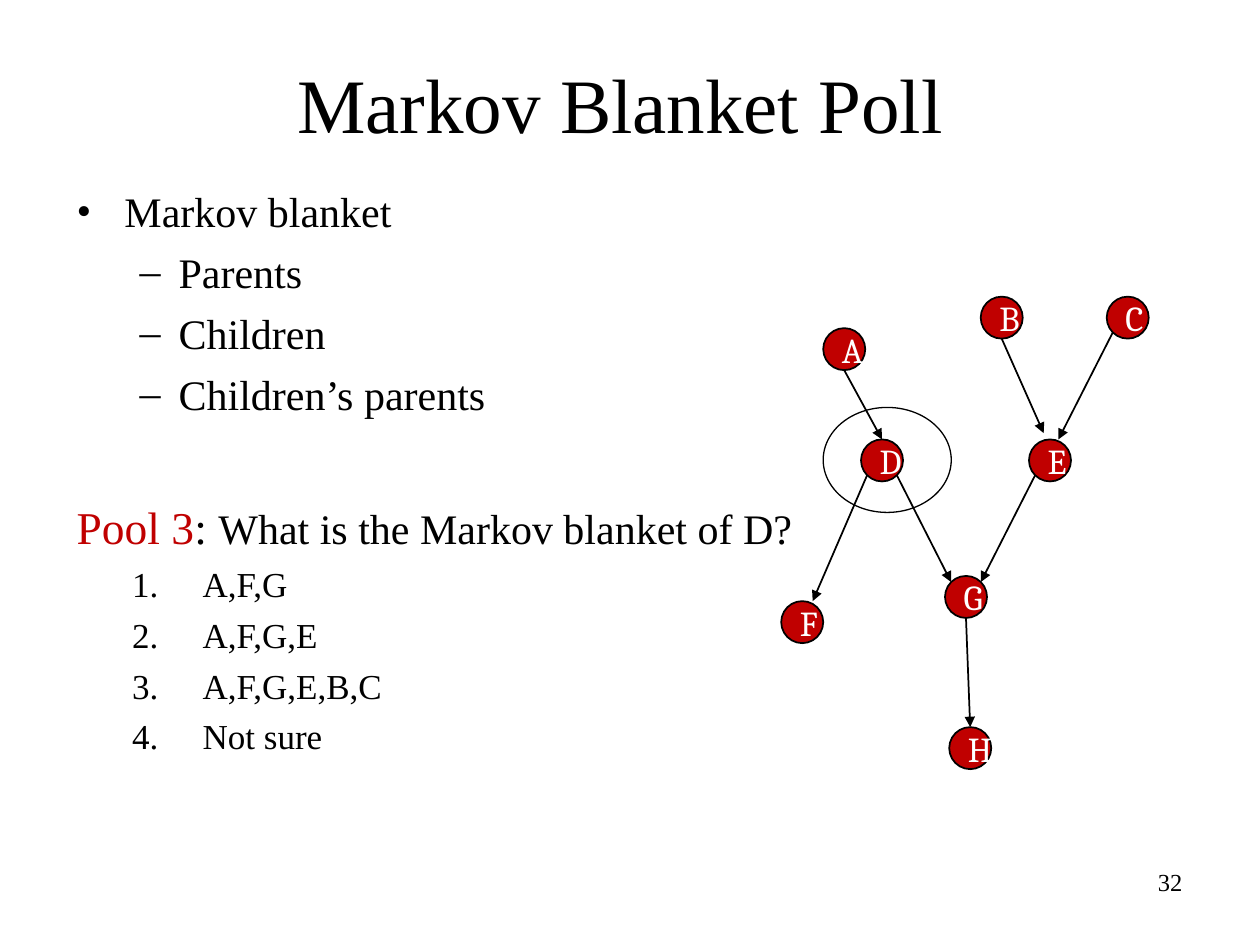
from lxml import etree
from pptx import Presentation
from pptx import util as u
from pptx.dml.color import RGBColor
from pptx.enum import shapes, text
from pptx.oxml.ns import qn

COLORS = {"ink": "000000", "accent": "C00000", "letter": "FFFFFF"}
SERIF, NODE_FONT = "Times New Roman", "Cambria"
WIDTH, HEIGHT = u.Inches(10), u.Inches(7.5)
COLUMNS, ROWS = 120, 90
RADIUS = 2
DIAGONAL = 0.71

NODES = {
    "D": (84, 43.85), "E": (100, 43.85), "G": (92, 56.85), "F": (76.4, 59.25),
    "H": (92.4, 71.25), "C": (107.4, 30.25), "B": (95.4, 30.25), "A": (80.4, 33.25),
}
TOP, BOTTOM = (0, -1), (0, 1)
LOWER_LEFT, LOWER_RIGHT = (-DIAGONAL, DIAGONAL), (DIAGONAL, DIAGONAL)
UPPER_LEFT, UPPER_RIGHT = (-DIAGONAL, -DIAGONAL), (DIAGONAL, -DIAGONAL)
EDGES = [
    ("D", LOWER_RIGHT, "G", UPPER_LEFT), ("E", LOWER_LEFT, "G", UPPER_RIGHT),
    ("D", LOWER_LEFT, "F", (0.5, -1)), ("G", BOTTOM, "H", TOP),
    ("C", LOWER_LEFT, "E", (0.4, -1)), ("B", BOTTOM, "E", (-0.3, -1.3)),
    ("A", BOTTOM, "D", TOP),
]
BLANKET = ["Parents", "Children", "Children’s parents"]
ANSWERS = ["A,F,G", "A,F,G,E", "A,F,G,E,B,C", "Not sure"]


def rgb(name):
    """Return the palette colour of that name."""
    return RGBColor.from_string(COLORS[name])


def grid(column, row):
    """Turn a grid position into slide lengths."""
    return round(WIDTH * column / COLUMNS), round(HEIGHT * row / ROWS)


def style(font, size, color="ink", face=SERIF):
    """Set size, colour and face of a font."""
    font.size, font.name = u.Pt(size), face
    font.color.rgb = rgb(color)


def add_title(slide, wording):
    """Place and format the title placeholder."""
    title = slide.shapes.title
    title.left, title.top = grid(6, 3.6)
    title.width, title.height = grid(108, 12.4)
    title.text_frame.text = wording
    title.text_frame.vertical_anchor = text.MSO_ANCHOR.MIDDLE
    heading = title.text_frame.paragraphs[0]
    heading.alignment = text.PP_ALIGN.CENTER
    style(heading.runs[0].font, 44)


def add_text_area(slide, position, size):
    """Add a wrapping text box and return its frame."""
    frame = slide.shapes.add_textbox(*grid(*position), *grid(*size)).text_frame
    frame.word_wrap = True
    return frame


def add_item(frame, wording, size, margin, hanging, mark, level=1):
    """Append a bulleted or, without a mark, numbered paragraph."""
    item = frame.add_paragraph() if frame.text else frame.paragraphs[0]
    if frame.text:
        item.space_before = u.Pt(size / 4)
    item.text, item.level = wording, level
    properties = item._p.get_or_add_pPr()
    properties.set("marL", str(u.Inches(margin)))
    properties.set("indent", str(-u.Inches(hanging)))
    etree.SubElement(properties, qn("a:buFont"), typeface=SERIF)
    if mark:
        etree.SubElement(properties, qn("a:buChar"), char=mark)
    else:
        etree.SubElement(properties, qn("a:buAutoNum"), type="arabicPeriod")
    style(item.font, size)
    style(item.runs[0].font, size)


def add_question(frame, parts):
    """Append the poll question, set apart from the list above."""
    question = frame.add_paragraph()
    question.space_before = u.Pt(46)
    for wording, size, color in parts:
        run = question.add_run()
        run.text = wording
        style(run.font, size, color)


def add_ellipse(slide, center, radii, line_width):
    """Add an unfilled ellipse around a grid position."""
    (x, y), (rx, ry) = center, radii
    ellipse = slide.shapes.add_shape(
        shapes.MSO_SHAPE.OVAL, *grid(x - rx, y - ry), *grid(2 * rx, 2 * ry))
    ellipse.shadow.inherit = False
    ellipse.fill.background()
    ellipse.line.color.rgb, ellipse.line.width = rgb("ink"), u.Pt(line_width)
    return ellipse


def add_node(slide, letter):
    """Add one lettered node of the network."""
    node = add_ellipse(slide, NODES[letter], (RADIUS, RADIUS), 1)
    node.fill.solid()
    node.fill.fore_color.rgb = rgb("accent")
    node.text_frame.text = letter
    node.text_frame.vertical_anchor = text.MSO_ANCHOR.MIDDLE
    label = node.text_frame.paragraphs[0]
    label.alignment = text.PP_ALIGN.CENTER
    style(label.runs[0].font, 20, "letter", NODE_FONT)


def anchor(letter, offset):
    """Return the point that lies an offset in radii from a node's centre."""
    return grid(*(c + RADIUS * d for c, d in zip(NODES[letter], offset)))


def add_edge(slide, parent, leaving, child, arriving):
    """Draw an arrow from a parent node to its child."""
    edge = slide.shapes.add_connector(
        shapes.MSO_CONNECTOR.STRAIGHT, *anchor(parent, leaving), *anchor(child, arriving))
    edge.line.color.rgb, edge.line.width = rgb("ink"), u.Pt(1)
    etree.SubElement(edge.line._get_or_add_ln(), qn("a:tailEnd"), type="triangle")
    etree.SubElement(edge._element.spPr, qn("a:effectLst"))


def main():
    """Build and save the slide."""
    deck = Presentation()
    deck.slide_width, deck.slide_height = WIDTH, HEIGHT
    slide = deck.slides.add_slide(deck.slide_layouts[5])
    add_title(slide, "Markov Blanket Poll ")

    body = add_text_area(slide, (6.12, 17.1), (72, 57.4))
    add_item(body, "Markov blanket", 24, 0.38, 0.38, "•", level=0)
    for relation in BLANKET:
        add_item(body, relation, 24, 0.81, 0.31, "–")
    add_question(body, [("Pool 3", 26, "accent"), (": ", 26, "ink"),
                        ("What is the Markov blanket of D?", 24, "ink")])
    for answer in ANSWERS:
        add_item(body, answer, 20, 1, 0.56, None)

    page = add_text_area(slide, (88.8, 82), (25, 6))
    page.text = "32"
    page.paragraphs[0].alignment = text.PP_ALIGN.RIGHT
    style(page.paragraphs[0].runs[0].font, 14)

    for letter in NODES:
        add_node(slide, letter)
    for edge in EDGES:
        add_edge(slide, *edge)
    add_ellipse(slide, (84.5, 43.8), (6.1, 5), 0.75)
    deck.save("out.pptx")


if __name__ == "__main__":
    main()
